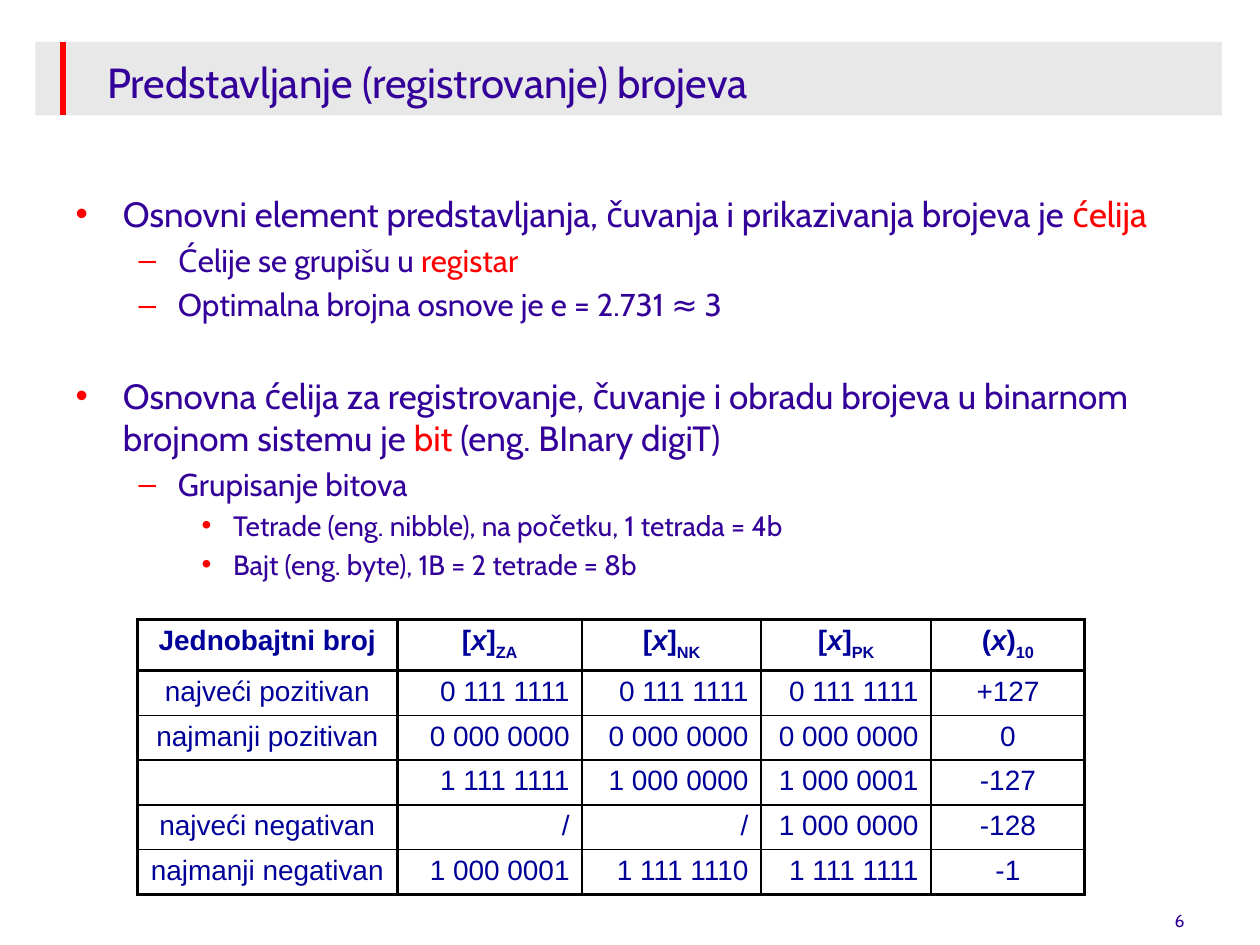
"""Build the slide on registering numbers in binary cells."""
from lxml.etree import SubElement
from pptx import Presentation
from pptx.dml.color import RGBColor
from pptx.enum.shapes import MSO_CONNECTOR, MSO_SHAPE
from pptx.enum.text import MSO_ANCHOR, MSO_AUTO_SIZE, PP_ALIGN
from pptx.oxml import parse_xml
from pptx.oxml.ns import nsdecls, qn
from pptx.util import Pt

COLORS = {"text": "330099", "accent": "FF0000", "bar": "CCCCCC",
          "table": "000099", "border": "000000"}


def set_font(font, name, size, color):
    font.name = name
    font.size = Pt(size)
    font.color.rgb = RGBColor.from_string(COLORS[color])


def place(shape, left, top, width, height):
    shape.left, shape.top = Pt(left), Pt(top)
    shape.width, shape.height = Pt(width), Pt(height)


deck = Presentation()
deck.slide_width, deck.slide_height = Pt(720), Pt(540)
page = deck.slides.add_slide(deck.slide_layouts[1])
shapes = page.shapes

bar = shapes.add_shape(MSO_SHAPE.RECTANGLE, Pt(20.2), Pt(24), Pt(678), Pt(42))
bar.shadow.inherit = False
bar.fill.solid()
bar.fill.fore_color.rgb = RGBColor.from_string(COLORS["bar"])
bar.line.fill.background()
SubElement(bar._element.find(".//" + qn("a:srgbClr")), qn("a:alpha"), val="45000")

mark = shapes.add_connector(MSO_CONNECTOR.STRAIGHT, Pt(36), Pt(24), Pt(36), Pt(66))
mark.line.color.rgb = RGBColor.from_string(COLORS["accent"])
mark.line.width = Pt(3.5)
SubElement(mark._element.spPr, qn("a:effectLst"))

for position, backdrop in enumerate((bar, mark), start=2):
    shapes._spTree.insert(position, backdrop._element)

title = shapes.title
place(title, 54, 21.6, 630, 50.4)
title.text_frame.text = "Predstavljanje (registrovanje) brojeva"
title.text_frame.vertical_anchor = MSO_ANCHOR.MIDDLE
title.text_frame.auto_size = MSO_AUTO_SIZE.NONE
para = title.text_frame.paragraphs[0]
para.alignment = PP_ALIGN.LEFT
set_font(para.font, "Cabin", 24, "text")

LEVELS = [
    {"size": 20, "margin": 27, "hanging": 27, "bullet": "•"},
    {"size": 18, "margin": 58.5, "hanging": 22.5, "bullet": "–"},
    {"size": 16, "margin": 90, "hanging": 18, "bullet": "•"},
]
POINTS = [
    (0, 4, "Osnovni element predstavljanja, čuvanja i prikazivanja brojeva je |ćelija"),
    (1, 3.6, "Ćelije se grupišu u |registar"),
    (1, 3.6, "Optimalna brojna osnove je e = 2.731 ≈ 3"),
    (0, 29.5, "Osnovna ćelija za registrovanje, čuvanje i obradu brojeva u binarnom "
              "brojnom sistemu je |bit |(eng. BInary digiT)"),
    (1, 3.6, "Grupisanje bitova"),
    (2, 3.2, "Tetrade (eng. nibble), na početku, 1 tetrada = 4b"),
    (2, 3.2, "Bajt (eng. byte), 1B = 2 tetrade = 8b"),
]
body = page.placeholders[1]
place(body, 36, 106.6, 672, 356.4)
frame = body.text_frame
frame.auto_size = MSO_AUTO_SIZE.NONE
for index, (level, gap, text) in enumerate(POINTS):
    style = LEVELS[level]
    para = frame.paragraphs[0] if index == 0 else frame.add_paragraph()
    para.level = level
    para.space_before = Pt(gap)
    props = para._p.get_or_add_pPr()
    props.set("marL", str(Pt(style["margin"])))
    props.set("indent", str(-Pt(style["hanging"])))
    SubElement(SubElement(props, qn("a:buClr")), qn("a:srgbClr"), val=COLORS["accent"])
    SubElement(props, qn("a:buChar"), char=style["bullet"])
    set_font(para.font, "Cabin", style["size"], "text")
    for part, piece in enumerate(text.split("|")):
        span = para.add_run()
        span.text = piece
        if part % 2:
            span.font.color.rgb = RGBColor.from_string(COLORS["accent"])

number = shapes.add_textbox(Pt(516.2), Pt(516.2), Pt(167.8), Pt(13))
number.text_frame.word_wrap = True
para = number.text_frame.paragraphs[0]
para.text = "6"
para.alignment = PP_ALIGN.RIGHT
set_font(para.font, "Cabin", 10, "text")

WIDTHS = [148.3, 105.8, 102.2, 97.2, 87.8]
HEIGHTS = [28.6] + [25] * 5
ROWS = [
    ["Jednobajtni broj", "[|x|]|ZA", "[|x|]|NK", "[|x|]|PK", "(|x|)|10"],
    ["najveći pozitivan", "0 111 1111", "0 111 1111", "0 111 1111", "+127"],
    ["najmanji pozitivan", "0 000 0000", "0 000 0000", "0 000 0000", "0"],
    ["", "1 111 1111", "1 000 0000", "1 000 0001", "-127"],
    ["najveći negativan", "/", "/", "1 000 0000", "-128"],
    ["najmanji negativan", "1 000 0001", "1 111 1110", "1 111 1111", "-1"],
]
THICK_COLUMN_EDGES = {0, 1, len(WIDTHS)}
THICK_ROW_EDGES = {0, 1, len(HEIGHTS)}

table = shapes.add_table(len(HEIGHTS), len(WIDTHS), Pt(78.6), Pt(354.2),
                         Pt(sum(WIDTHS)), Pt(sum(HEIGHTS))).table
table.first_row = table.horz_banding = False
for column, width in zip(table.columns, WIDTHS):
    column.width = Pt(width)
for row, height in zip(table.rows, HEIGHTS):
    row.height = Pt(height)

for r, values in enumerate(ROWS):
    for c, value in enumerate(values):
        cell = table.cell(r, c)
        cell.margin_top = cell.margin_bottom = Pt(3.2)
        cell.fill.background()
        para = cell.text_frame.paragraphs[0]
        centred = r == 0 or c in (0, len(WIDTHS) - 1)
        para.alignment = PP_ALIGN.CENTER if centred else PP_ALIGN.RIGHT
        set_font(para.font, "Arial", 16, "table")
        para.font.bold = r == 0
        for part, piece in enumerate(value.split("|") if value else []):
            span = para.add_run()
            span.text = piece
            if part == 1:
                span.font.italic = True
            if part == 3:
                span._r.get_or_add_rPr().set("baseline", "-30000")
        SubElement(para._p, qn("a:endParaRPr"), sz="1600")
        edges = [("lnL", c in THICK_COLUMN_EDGES), ("lnR", c + 1 in THICK_COLUMN_EDGES),
                 ("lnT", r in THICK_ROW_EDGES), ("lnB", r + 1 in THICK_ROW_EDGES)]
        for order, (edge, thick) in enumerate(edges):
            cell._tc.get_or_add_tcPr().insert(order, parse_xml(
                f'<a:{edge} {nsdecls("a")} w="{Pt(2 if thick else 1)}"><a:solidFill>'
                f'<a:srgbClr val="{COLORS["border"]}"/></a:solidFill></a:{edge}>'))

deck.save("out.pptx")
